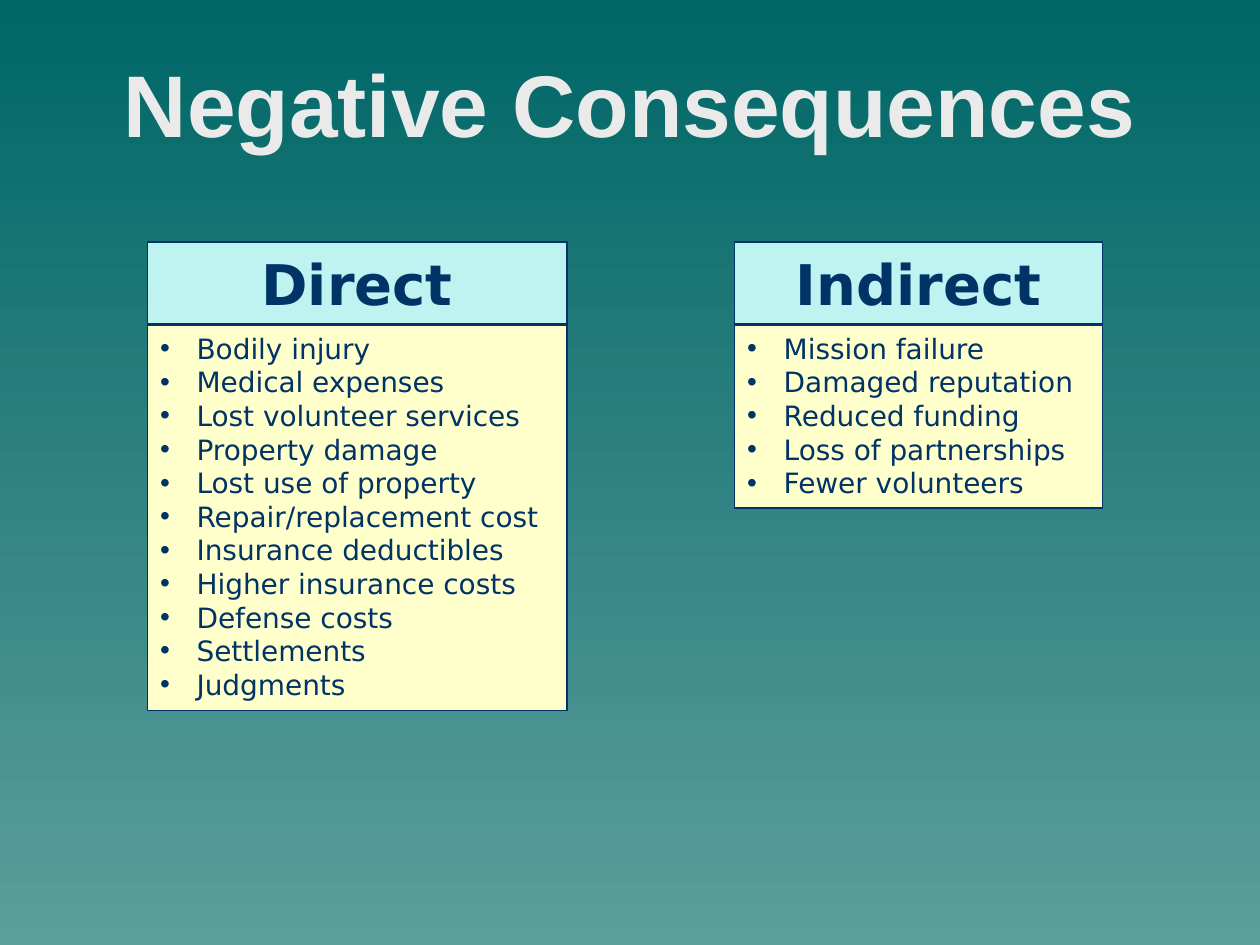
from dataclasses import dataclass

from lxml import etree
from pptx import Presentation
from pptx.dml.color import RGBColor
from pptx.enum.text import MSO_ANCHOR, MSO_AUTO_SIZE, PP_ALIGN
from pptx.oxml.ns import qn
from pptx.util import Inches, Pt

CENTER, LEFT = PP_ALIGN.CENTER, PP_ALIGN.LEFT
TOP, MIDDLE = MSO_ANCHOR.TOP, MSO_ANCHOR.MIDDLE
NO_AUTOFIT = MSO_AUTO_SIZE.NONE

TEAL_DARK = RGBColor(0x00, 0x66, 0x66)
TEAL_LIGHT = RGBColor(0x5C, 0x9E, 0x9C)
TITLE_GRAY = RGBColor(0xEA, 0xEA, 0xEA)
NAVY = RGBColor(0x00, 0x33, 0x66)
AQUA = RGBColor(0xBF, 0xF3, 0xF2)
CREAM = RGBColor(0xFF, 0xFF, 0xCC)

COMPARISON_LAYOUT = 4
HEADING_TOP, HEADING_HEIGHT = 1.92, 0.65
LIST_TOP = 2.58
BULLET_INDENT = Inches(0.29)


@dataclass
class Column:
    heading: str
    items: list[str]
    left: float
    width: float
    list_height: float
    heading_idx: int
    list_idx: int


COLUMNS = [
    Column("Direct",
           ["Bodily injury", "Medical expenses", "Lost volunteer services",
            "Property damage", "Lost use of property",
            "Repair/replacement cost", "Insurance deductibles",
            "Higher insurance costs", "Defense costs", "Settlements",
            "Judgments"],
           1.17, 3.33, 3.06, 1, 2),
    Column("Indirect",
           ["Mission failure", "Damaged reputation", "Reduced funding",
            "Loss of partnerships", "Fewer volunteers"],
           5.83, 2.92, 1.45, 3, 4),
]


def place(box, left: float, top: float, width: float, height: float) -> None:
    box.left, box.top = Inches(left), Inches(top)
    box.width, box.height = Inches(width), Inches(height)


def paint(box, fill: RGBColor) -> None:
    box.fill.solid()
    box.fill.fore_color.rgb = fill
    box.line.color.rgb = NAVY
    box.line.width = Pt(1)


def add_bullet(para) -> None:
    properties = para._p.get_or_add_pPr()
    properties.set("marL", str(BULLET_INDENT))
    properties.set("indent", str(-BULLET_INDENT))
    etree.SubElement(properties, qn("a:buChar")).set("char", "•")


def write(box, lines: list[str], font: str, size: int, color: RGBColor,
          bold: bool = False, bulleted: bool = False) -> None:
    frame = box.text_frame
    frame.text = "\n".join(lines)
    frame.word_wrap = True
    frame.auto_size = NO_AUTOFIT
    frame.vertical_anchor = TOP if bulleted else MIDDLE
    for para in frame.paragraphs:
        if bulleted:
            add_bullet(para)
        para.alignment = LEFT if bulleted else CENTER
        para.space_before = Pt(0)
        para.font.name = font
        para.font.size = Pt(size)
        para.font.bold = bold
        para.font.color.rgb = color


def draw_column(page, column: Column) -> None:
    heading = page.placeholders[column.heading_idx]
    place(heading, column.left, HEADING_TOP, column.width, HEADING_HEIGHT)
    paint(heading, AQUA)
    write(heading, [column.heading], "DejaVu Sans", 32, NAVY, bold=True)

    listing = page.placeholders[column.list_idx]
    place(listing, column.left, LIST_TOP, column.width, column.list_height)
    paint(listing, CREAM)
    write(listing, column.items, "DejaVu Sans", 16, NAVY, bulleted=True)


def main() -> None:
    deck = Presentation()
    deck.slide_width, deck.slide_height = Inches(10), Inches(7.5)
    page = deck.slides.add_slide(deck.slide_layouts[COMPARISON_LAYOUT])

    # Background: dark at the top, lighter at the bottom
    backdrop = page.background.fill
    backdrop.gradient()
    backdrop.gradient_angle = 270
    for stop, color in zip(backdrop.gradient_stops, (TEAL_DARK, TEAL_LIGHT)):
        stop.color.rgb = color

    # Title
    title = page.shapes.title
    place(title, 0.5, 0.3, 9, 1.03)
    write(title, ["Negative Consequences"], "Arial", 50, TITLE_GRAY, bold=True)

    # Headed lists
    for column in COLUMNS:
        draw_column(page, column)

    deck.save("out.pptx")


if __name__ == "__main__":
    main()
